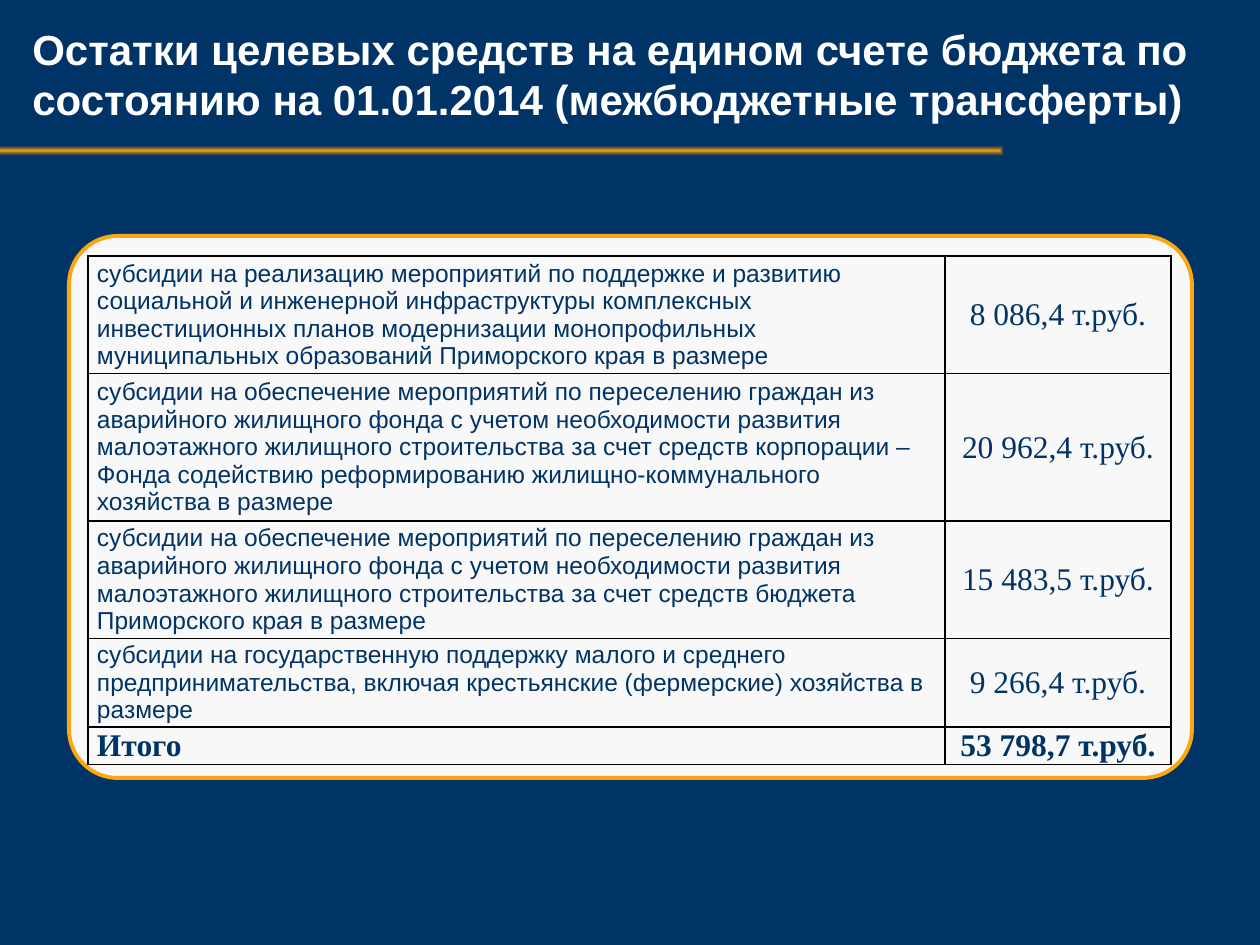
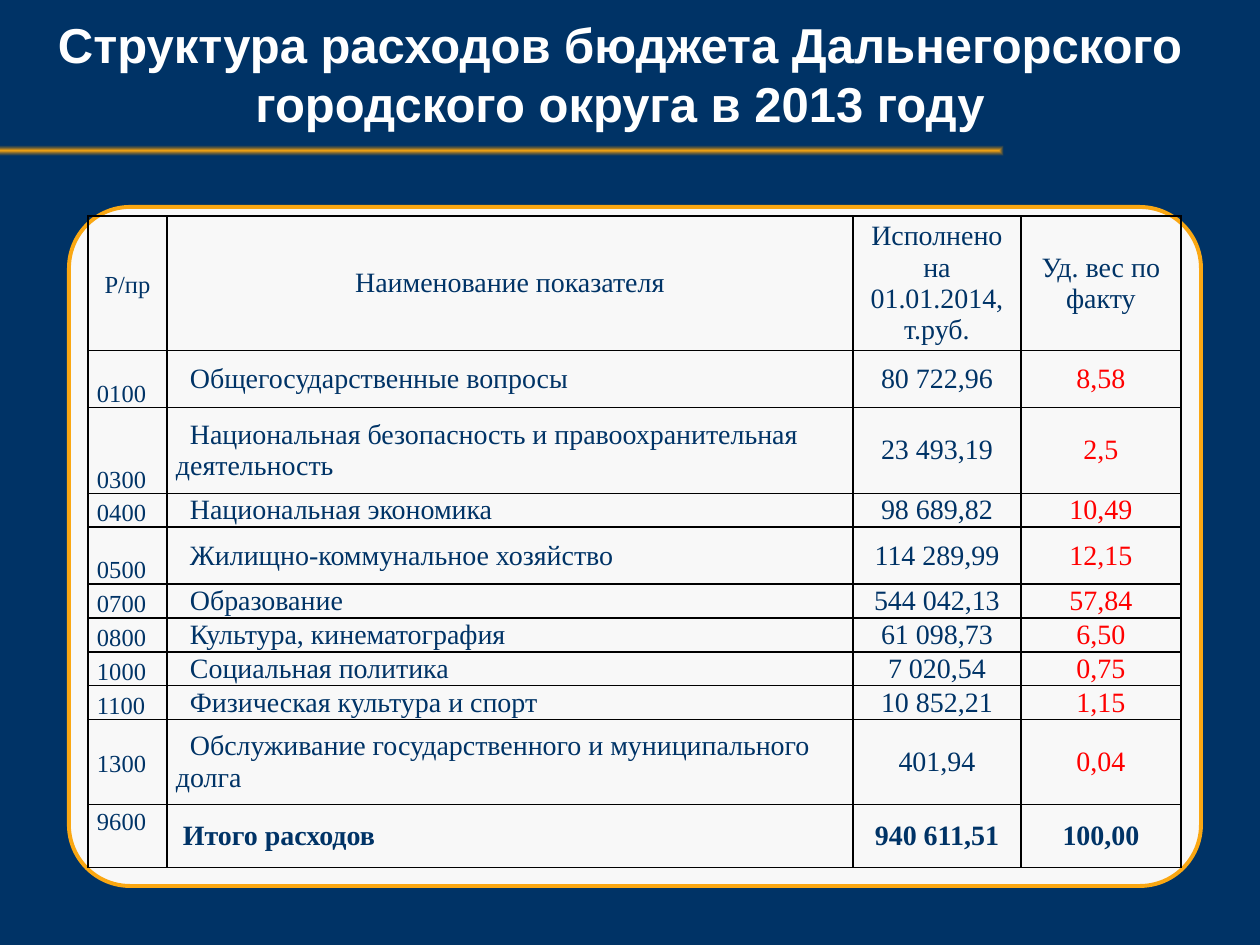
from pptx import Presentation
from pptx.dml.color import RGBColor
from pptx.enum.shapes import MSO_SHAPE
from pptx.enum.text import MSO_ANCHOR, PP_ALIGN
from pptx.oxml import parse_xml
from pptx.oxml.ns import nsdecls
from pptx.util import Emu, Pt

NAVY = RGBColor(0x00, 0x33, 0x66)
ORANGE = RGBColor(0xFA, 0xA7, 0x12)
DARK_ORANGE = RGBColor(0xB3, 0x77, 0x0D)
PANEL = RGBColor(0xF8, 0xF8, 0xF8)
WHITE = RGBColor(0xFF, 0xFF, 0xFF)
BLACK = RGBColor(0x00, 0x00, 0x00)
RED = RGBColor(0xFF, 0x00, 0x00)

SANS, SERIF = "Arial", "Times New Roman"
LEFT, CENTER = PP_ALIGN.LEFT, PP_ALIGN.CENTER
TOP, MIDDLE, BOTTOM = MSO_ANCHOR.TOP, MSO_ANCHOR.MIDDLE, MSO_ANCHOR.BOTTOM
RECT, ROUNDED = MSO_SHAPE.RECTANGLE, MSO_SHAPE.ROUNDED_RECTANGLE

PX_PER_INCH = 126
CELL_INSET = 9
BLANK_LAYOUT = 6


def px(length):
    return Emu(round(length * 914400 / PX_PER_INCH))


def write(frame, text, font=SERIF, size=16, color=NAVY, bold=False,
          align=LEFT, indent=0, spacing=None):
    """Fill a text frame with one formatted paragraph; indent is in px."""
    frame.word_wrap = True
    paragraph = frame.paragraphs[0]
    paragraph.alignment = align
    if spacing:
        paragraph.line_spacing = spacing
    if indent:
        paragraph._p.get_or_add_pPr().set("indent", str(px(indent)))
    run = paragraph.add_run()
    run.text = text
    run.font.name = font
    run.font.size = Pt(size)
    run.font.bold = bold
    run.font.color.rgb = color


class Deck:
    def __init__(self):
        self.prs = Presentation()
        self.prs.slide_width, self.prs.slide_height = px(1260), px(945)
        background = self.prs.slide_master.background.fill
        background.solid()
        background.fore_color.rgb = NAVY
        self.slide = None

    def add_slide(self, title, left, width, **style):
        layout = self.prs.slide_layouts[BLANK_LAYOUT]
        self.slide = self.prs.slides.add_slide(layout)
        self.rule()
        heading = self.slide.shapes.add_textbox(px(left), 0, px(width), px(147))
        heading.text_frame.vertical_anchor = MIDDLE
        write(heading.text_frame, title, font=SANS, color=WHITE, bold=True, **style)

    def shape(self, kind, left, top, width, height):
        shape = self.slide.shapes.add_shape(
            kind, px(left), px(top), px(width), px(height))
        shape.shadow.inherit = False
        return shape

    def rule(self):
        """Draw the line under the title, glowing from its middle outwards."""
        rule = self.shape(RECT, -4, 146, 1008, 10)
        rule.line.fill.background()
        rule._element.spPr.insert(2, parse_xml(
            f'<a:gradFill {nsdecls("a")} rotWithShape="1"><a:gsLst>'
            f'<a:gs pos="0"><a:srgbClr val="{ORANGE}"/></a:gs>'
            f'<a:gs pos="100000"><a:srgbClr val="{DARK_ORANGE}">'
            '<a:alpha val="0"/></a:srgbClr></a:gs></a:gsLst>'
            '<a:path path="rect"><a:fillToRect l="50000" t="50000" '
            'r="50000" b="50000"/></a:path></a:gradFill>'))

    def panel(self, top, width, height):
        panel = self.shape(ROUNDED, 69, top, width, height)
        panel.adjustments[0] = 0.09
        panel.fill.solid()
        panel.fill.fore_color.rgb = PANEL
        panel.line.color.rgb = ORANGE
        panel.line.width = Pt(2.25)

    def table(self, top, widths, heights, rows):
        """Draw a grid; each cell is a pair of text and format."""
        table = self.slide.shapes.add_table(
            len(heights), len(widths), px(88), px(top),
            px(sum(widths)), px(sum(heights))).table
        table.first_row = table.horz_banding = False
        for column, width in zip(table.columns, widths):
            column.width = px(width)
        for row, height in zip(table.rows, heights):
            row.height = px(height)
        for r, row in enumerate(rows):
            for c, (text, style) in enumerate(row):
                self.cell(table.cell(r, c), text, **style)

    def cell(self, cell, text, anchor=MIDDLE, **style):
        cell.margin_left = cell.margin_right = px(CELL_INSET)
        cell.margin_top = cell.margin_bottom = 0
        cell.vertical_anchor = anchor
        properties = cell._tc.get_or_add_tcPr()
        for side in "LRTB":
            properties.append(parse_xml(
                f'<a:ln{side} {nsdecls("a")} w="{Pt(1)}"><a:solidFill>'
                f'<a:srgbClr val="{BLACK}"/></a:solidFill></a:ln{side}>'))
        cell.fill.background()
        write(cell.text_frame, text, **style)


SUBSIDIES = [
    ("субсидии на реализацию мероприятий по поддержке и развитию социальной "
     "и инженерной инфраструктуры комплексных инвестиционных планов "
     "модернизации монопрофильных муниципальных образований Приморского края "
     "в размере", "8 086,4 т.руб."),
    ("субсидии на обеспечение мероприятий по переселению граждан из "
     "аварийного жилищного фонда с учетом необходимости развития "
     "малоэтажного жилищного строительства за счет средств корпорации – "
     "Фонда содействию реформированию жилищно-коммунального хозяйства в "
     "размере", "20 962,4 т.руб."),
    ("субсидии на обеспечение мероприятий по переселению граждан из "
     "аварийного жилищного фонда с учетом необходимости развития "
     "малоэтажного жилищного строительства за счет средств бюджета "
     "Приморского края в размере", "15 483,5 т.руб."),
    ("субсидии на государственную поддержку малого и среднего "
     "предпринимательства, включая крестьянские (фермерские) хозяйства в "
     "размере", "9 266,4 т.руб."),
]

EXPENSES = [
    ("0100", "Общегосударственные вопросы", "80 722,96", "8,58"),
    ("0300", "Национальная безопасность и правоохранительная деятельность",
     "23 493,19", "2,5"),
    ("0400", "Национальная экономика", "98 689,82", "10,49"),
    ("0500", "Жилищно-коммунальное хозяйство", "114 289,99", "12,15"),
    ("0700", "Образование", "544 042,13", "57,84"),
    ("0800", "Культура, кинематография", "61 098,73", "6,50"),
    ("1000", "Социальная политика", "7 020,54", "0,75"),
    ("1100", "Физическая культура и спорт", "10 852,21", "1,15"),
    ("1300", "Обслуживание государственного и муниципального долга",
     "401,94", "0,04"),
]


def balances_slide(deck):
    deck.add_slide("Остатки целевых средств на едином счете бюджета по "
                   "состоянию на 01.01.2014 (межбюджетные трансферты)",
                   20, 1211, size=24)
    deck.panel(236, 1123, 542)
    purpose = dict(font=SANS, size=14)
    amount = dict(size=18, align=CENTER)
    rows = [[(name, purpose), (value, amount)] for name, value in SUBSIDIES]
    rows.append([("Итого", dict(size=18, bold=True)),
                 ("53 798,7 т.руб.", dict(amount, bold=True))])
    deck.table(256, [857, 226], [110, 138, 110, 83, 34], rows)


def expenses_slide(deck):
    deck.add_slide("Структура расходов бюджета Дальнегорского городского "
                   "округа в 2013 году", -20, 1280, size=28, align=CENTER)
    deck.panel(207, 1132, 679)
    code = dict(size=14, spacing=1.15)
    centered = dict(align=CENTER)
    total = dict(align=CENTER, bold=True)
    rows = [[("Р/пр", dict(code, align=CENTER)),
             ("Наименование показателя", centered),
             ("Исполнено на 01.01.2014, т.руб.", centered),
             ("Уд. вес по факту", centered)]]
    for number, name, spent, share in EXPENSES:
        anchor = MIDDLE if number == "1300" else BOTTOM
        rows.append([(number, dict(code, anchor=anchor)),
                     (name, dict(indent=14)),
                     (spent, centered),
                     (share, dict(centered, color=RED))])
    rows.append([("9600", dict(code, anchor=TOP)),
                 ("Итого расходов", dict(indent=7, bold=True)),
                 ("940 611,51", total), ("100,00", total)])
    deck.table(216, [79, 686, 168, 160],
               [125, 57, 86, 30, 57, 31, 32, 31, 31, 85, 63], rows)


def main():
    deck = Deck()
    balances_slide(deck)
    expenses_slide(deck)
    deck.prs.save("out.pptx")


if __name__ == "__main__":
    main()
